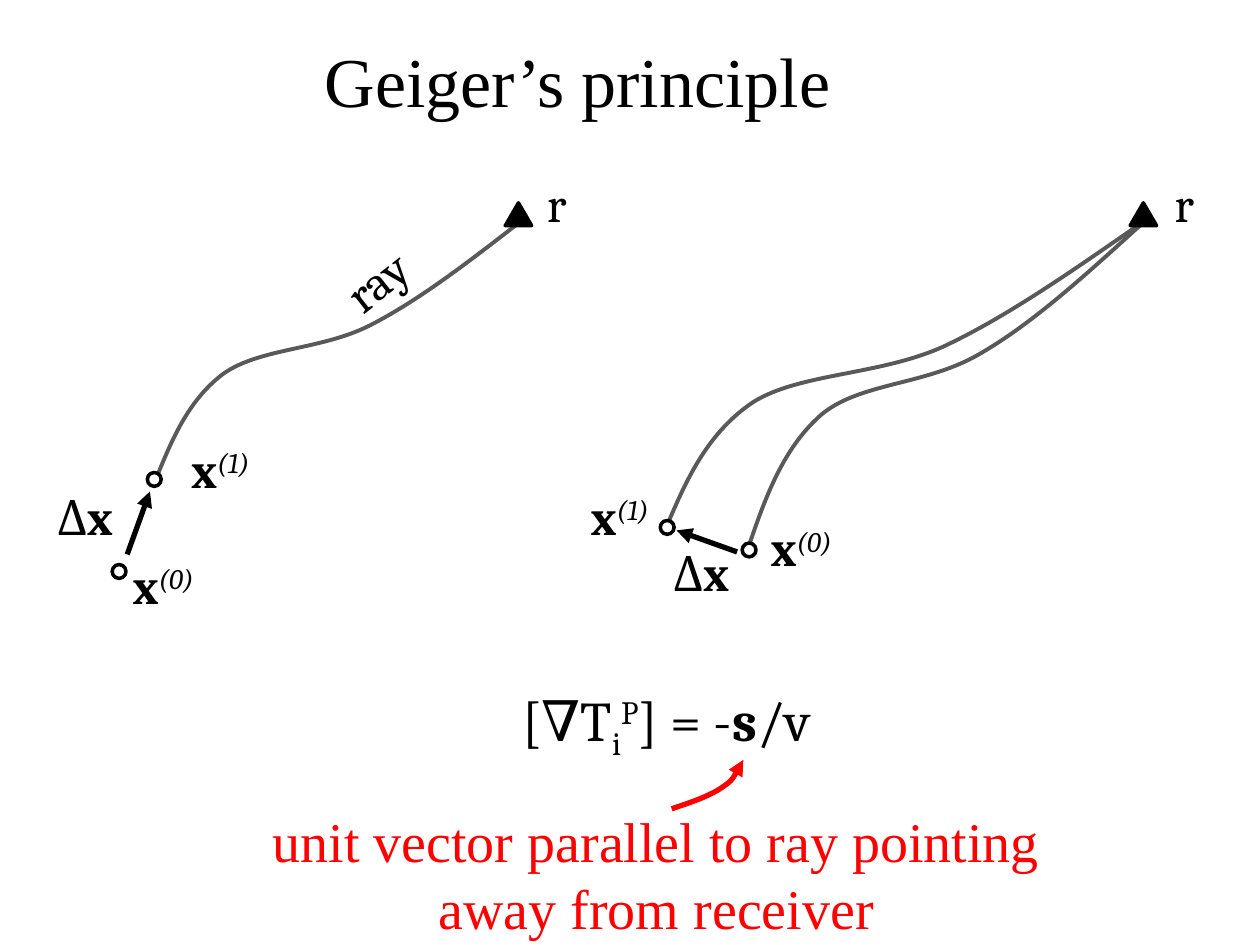
from lxml import etree
from pptx import Presentation
from pptx.dml.color import RGBColor
from pptx.enum import shapes, text
from pptx.oxml.ns import qn
from pptx.util import Pt

BLACK = RGBColor(0x00, 0x00, 0x00)
WHITE = RGBColor(0xFF, 0xFF, 0xFF)
GREY = RGBColor(0x59, 0x59, 0x59)
RED = RGBColor(0xFF, 0x00, 0x00)
MATH_FONT = "Cambria"
TEXT_FONT = "Times New Roman"

LEFT_RAY = [(88.6, 275), (97.9, 252), (107.3, 229), (127.4, 213.8), (148.3, 198.7),
            (183.6, 200.2), (211.7, 185.8), (239.8, 171.4), (268.6, 149), (297.4, 126.7)]
START_RAY = [(427, 314.6), (437, 285.1), (447.1, 256.3), (469.4, 236.9), (491.8, 218.2),
             (529.9, 220.3), (560.9, 201.6), (591.8, 183.6), (622.8, 154.8), (653.8, 126.7)]
MOVED_RAY = [(380.9, 301), (392.4, 273.6), (404.6, 247), (430.6, 229.7), (457.2, 213.1),
             (502.6, 214.6), (539.3, 198), (576, 180.7), (612.7, 154.8), (650.2, 128.9)]
POINTER = [(383.8, 462.2), (394.6, 458.6), (405.4, 455), (412.6, 450),
           (419, 445.7), (421.9, 439.9), (424.8, 434.2)]


def style_line(shape, color, width, arrow=False):
    shape.line.color.rgb = color
    shape.line.width = Pt(width)
    if arrow:
        outline = shape.element.spPr.find(qn("a:ln"))
        etree.SubElement(outline, qn("a:tailEnd"), type="triangle")


def add_curve(page, points, color, width, arrow=False):
    start, *rest = [(Pt(x), Pt(y)) for x, y in points]
    builder = page.shapes.build_freeform(*start)
    builder.add_line_segments(rest, close=False)
    curve = builder.convert_to_shape()
    curve.fill.background()
    curve.shadow.inherit = False
    style_line(curve, color, width, arrow)
    outline = curve.element.spPr.find(".//" + qn("a:path"))
    segments = outline.findall(qn("a:lnTo"))
    for first in range(0, len(segments), 3):
        bezier = etree.SubElement(outline, qn("a:cubicBezTo"))
        for segment in segments[first:first + 3]:
            bezier.append(segment[0])
            outline.remove(segment)


def add_arrow(page, start, end):
    ends = [Pt(value) for value in (*start, *end)]
    arrow = page.shapes.add_connector(shapes.MSO_CONNECTOR.STRAIGHT, *ends)
    style_line(arrow, BLACK, 3, arrow=True)
    etree.SubElement(arrow.element.spPr, qn("a:effectLst"))


def add_marker(page, kind, left, top, width, height, color):
    marker = page.shapes.add_shape(kind, Pt(left), Pt(top), Pt(width), Pt(height))
    marker.shadow.inherit = False
    marker.fill.solid()
    marker.fill.fore_color.rgb = color
    style_line(marker, BLACK, 2)


def add_text(page, spans, left, top, width, height, size=28, font=MATH_FONT,
             color=BLACK, middle=False, rotation=0):
    box = page.shapes.add_textbox(Pt(left), Pt(top), Pt(width), Pt(height))
    box.rotation = rotation
    frame = box.text_frame
    frame.word_wrap = True
    if middle:
        frame.vertical_anchor = text.MSO_ANCHOR.MIDDLE
    para = frame.paragraphs[0]
    para.alignment = text.PP_ALIGN.CENTER
    for words, bold, italic, baseline in spans:
        span = para.add_run()
        span.text = words
        span.font.name = font
        span.font.size = Pt(size)
        span.font.color.rgb = color
        span.font.bold = bold
        span.font.italic = italic
        if baseline:
            span._r.get_or_add_rPr().set("baseline", str(baseline * 1000))


def plain(words):
    return (words, False, False, 0)


def bold(words):
    return (words, True, False, 0)


def add_receiver(page, left, label_left):
    add_marker(page, shapes.MSO_SHAPE.ISOSCELES_TRIANGLE, left, 115.9, 15.1, 13, BLACK)
    add_text(page, [plain("r")], label_left, 95.8, 86.4, 41.2)


def add_source(page, index, left, top, label_left, label_top, label_width):
    add_marker(page, shapes.MSO_SHAPE.OVAL, left, top, 7.9, 7.9, WHITE)
    add_text(page, [bold("x"), (f"({index})", False, True, 30)],
             label_left, label_top, label_width, 41.2)


def add_step(page, start, end, label_left, label_top):
    add_arrow(page, start, end)
    add_text(page, [plain("Δ"), bold("x")], label_left, label_top, 74.2, 41.2)


def main():
    deck = Presentation()
    deck.slide_width, deck.slide_height = Pt(720), Pt(540)
    page = deck.slides.add_slide(deck.slide_layouts[6])

    add_text(page, [plain("Geiger’s principle")], 162, 18, 336.2, 55.4,
             size=40, font=TEXT_FONT)

    for ray in (LEFT_RAY, START_RAY, MOVED_RAY):
        add_curve(page, ray, GREY, 2.25)
    add_receiver(page, 288.7, 275)
    add_receiver(page, 645.8, 633.6)

    add_step(page, (72.7, 316.8), (85.7, 280.8), 11.5, 274.3)
    add_step(page, (421.2, 315.4), (386.6, 303.1), 363.6, 306.7)

    add_source(page, 0, 64.1, 322.6, 56.2, 313.9, 74.2)
    add_source(page, 1, 84.2, 270, 82.8, 247.7, 86.4)
    add_source(page, 0, 424.1, 310.3, 418.3, 292.3, 79.2)
    add_source(page, 1, 377.3, 297.4, 314.6, 274.3, 79.2)
    add_text(page, [plain("ray")], 172.1, 139.7, 86.4, 41.2, rotation=321.9)

    gradient = [plain("[∇T"), ("i", False, False, -25), ("P", False, False, 30),
                plain("] = -"), bold("s"), plain("/v")]
    add_text(page, gradient, 131.8, 365.8, 498.2, 95.8, size=32, middle=True)
    add_curve(page, POINTER, RED, 3, arrow=True)
    add_text(page, [plain("unit vector parallel to ray pointing away from receiver")],
             120.2, 473.8, 509.8, 51.1, size=32, font=TEXT_FONT, color=RED, middle=True)

    deck.save("out.pptx")


if __name__ == "__main__":
    main()
